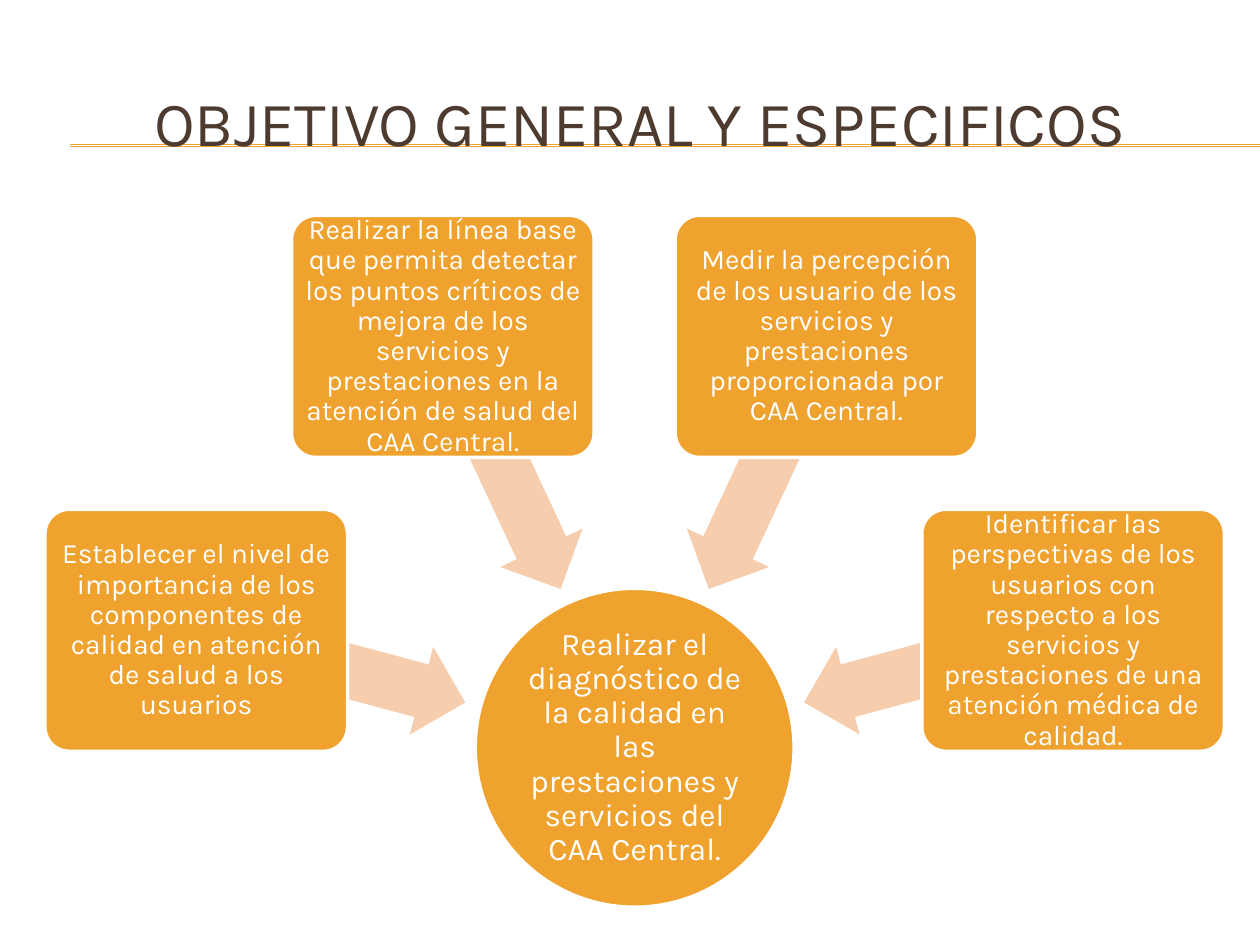
from math import cos, radians, sin

from lxml import etree
from pptx import Presentation
from pptx.dml.color import RGBColor
from pptx.enum.shapes import MSO_CONNECTOR as Connector, MSO_SHAPE as Shape
from pptx.enum.text import MSO_ANCHOR as Anchor, MSO_AUTO_SIZE as AutoSize, PP_ALIGN as Align
from pptx.oxml.ns import qn
from pptx.util import Cm, Pt

ORANGE = RGBColor(0xF0, 0xA2, 0x2E)
PEACH = RGBColor(0xF6, 0xCE, 0xAD)
BROWN = RGBColor(0x4E, 0x3B, 0x30)
WHITE = RGBColor(0xFF, 0xFF, 0xFF)
FONT = "Karla"

PAGE_WIDTH, PAGE_HEIGHT = 25.4, 19.05
TITLE_BOX = (0.84, 1.27, 24.13, 2.34)
HUB_BOX = (9.58, 11.86, 6.43, 6.43)
CARD_WIDTH, CARD_HEIGHT = 6.1, 4.88
ARROW_LENGTH, ARROW_HEIGHT = 5.61, 1.83
CARD_RADIUS, ARROW_RADIUS = 9.15, 6.34
FIRST_ANGLE, ANGLE_STEP = 195, 50

TITLE = "OBJETIVO GENERAL Y ESPECIFICOS"
GENERAL_GOAL = (
    "Realizar el diagnóstico de la calidad en las prestaciones y "
    "servicios del CAA Central."
)
SPECIFIC_GOALS = [
    "Establecer el nivel de importancia de los componentes de calidad "
    "en atención de salud a los usuarios",
    "Realizar la línea base que permita detectar los puntos críticos de mejora "
    "de los servicios y prestaciones en la atención de salud del CAA Central.",
    "Medir la percepción de los usuario de los servicios y prestaciones "
    "proporcionada por CAA Central.",
    "Identificar las perspectivas de los usuarios con respecto a los servicios "
    "y prestaciones de una atención médica de calidad.",
]


def write(frame, text, size, color):
    frame.word_wrap = True
    frame.auto_size = AutoSize.NONE
    frame.vertical_anchor = Anchor.MIDDLE
    para = frame.paragraphs[0]
    para.alignment = Align.CENTER
    span = para.add_run()
    span.text = text
    span.font.name = FONT
    span.font.size = Pt(size)
    span.font.color.rgb = color
    return para


def add_solid(page, kind, box, fill):
    shape = page.shapes.add_shape(kind, *map(Cm, box))
    shape.shadow.inherit = False
    shape.fill.solid()
    shape.fill.fore_color.rgb = fill
    shape.line.fill.background()
    return shape


def add_goal(page, kind, box, text, size, inset):
    goal = add_solid(page, kind, box, ORANGE)
    goal.line.color.rgb = WHITE
    goal.line.width = Pt(2)
    frame = goal.text_frame
    frame.margin_left = frame.margin_right = Cm(inset)
    frame.margin_top = frame.margin_bottom = Cm(inset)
    write(frame, text, size, WHITE).line_spacing = 0.9
    return goal


def box_around(hub, radius, angle, width, height):
    left, top, hub_width, hub_height = hub
    x = left + hub_width / 2 + radius * cos(radians(angle))
    y = top + hub_height / 2 + radius * sin(radians(angle))
    return x - width / 2, y - height / 2, width, height


def build_title(page, box):
    left, top, width, height = box
    title = page.shapes.title
    title.left, title.top, title.width, title.height = map(Cm, box)
    write(title.text_frame, TITLE, 36, BROWN)
    for drop in (1.65, 1.68):
        rule = page.shapes.add_connector(
            Connector.STRAIGHT, Cm(left + 0.58), Cm(top + drop),
            Cm(PAGE_WIDTH), Cm(top + drop))
        rule.line.color.rgb = ORANGE
        rule.line.width = Pt(0.75)
        etree.SubElement(rule.element.spPr, qn("a:effectLst"))
        title.element.addprevious(rule.element)


def build_diagram(page, hub):
    add_goal(page, Shape.OVAL, hub, GENERAL_GOAL, 18, 0.03)
    for index, text in enumerate(SPECIFIC_GOALS):
        angle = FIRST_ANGLE + index * ANGLE_STEP
        arrow_box = box_around(hub, ARROW_RADIUS, angle, ARROW_LENGTH, ARROW_HEIGHT)
        arrow = add_solid(page, Shape.LEFT_ARROW, arrow_box, PEACH)
        arrow.rotation = angle
        arrow.adjustments[0] = 0.6
        arrow.adjustments[1] = 0.5
        card_box = box_around(hub, CARD_RADIUS, angle, CARD_WIDTH, CARD_HEIGHT)
        card = add_goal(page, Shape.ROUNDED_RECTANGLE, card_box, text, 16, 0.08)
        card.adjustments[0] = 0.1


def main():
    deck = Presentation()
    deck.slide_width, deck.slide_height = Cm(PAGE_WIDTH), Cm(PAGE_HEIGHT)
    page = deck.slides.add_slide(deck.slide_layouts[5])
    build_title(page, TITLE_BOX)
    build_diagram(page, HUB_BOX)
    deck.save("out.pptx")


if __name__ == "__main__":
    main()
